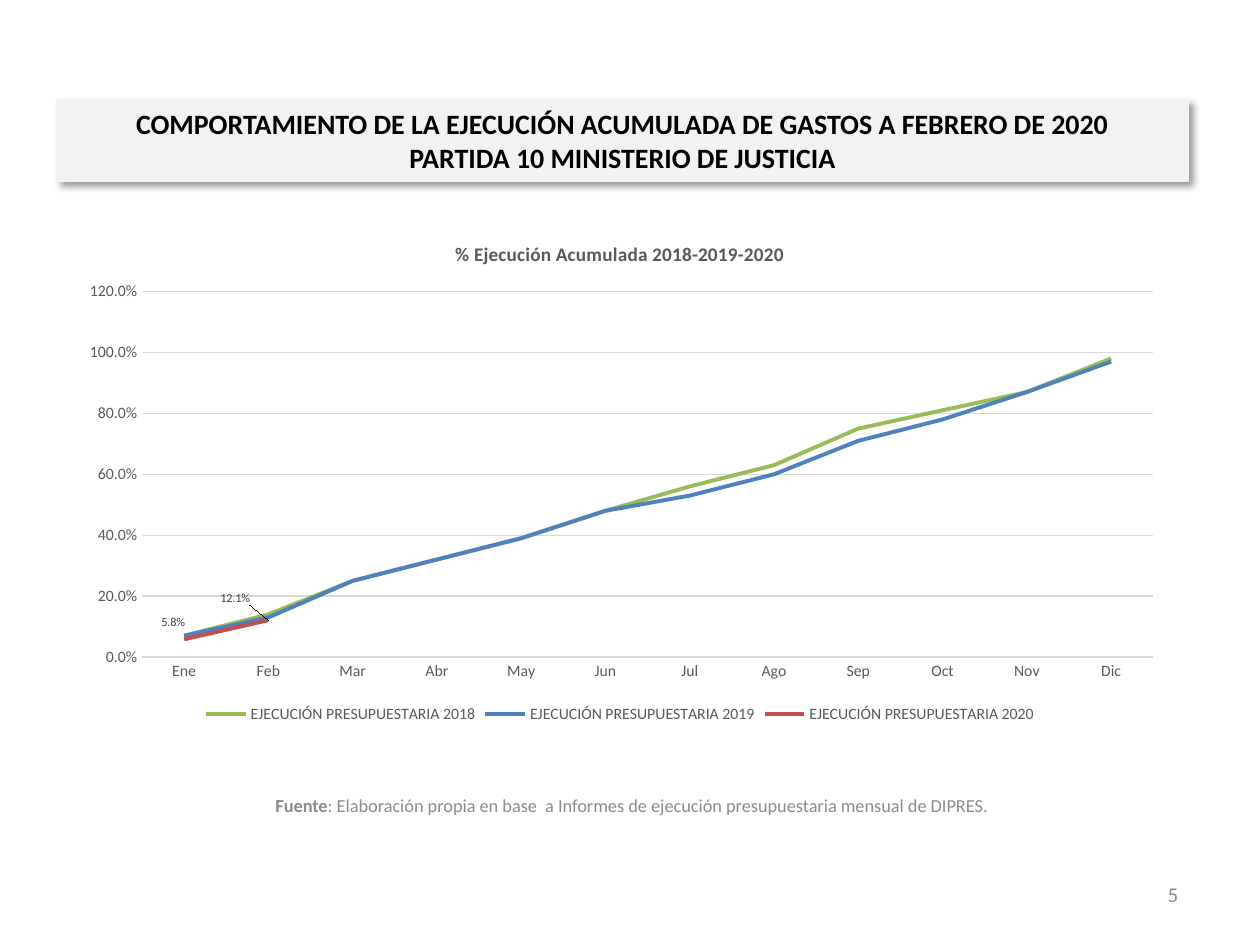
from lxml.etree import SubElement
from pptx import Presentation
from pptx.chart.data import CategoryChartData
from pptx.dml.color import RGBColor
from pptx.enum.chart import XL_LABEL_POSITION, XL_LEGEND_POSITION, XL_TICK_MARK
from pptx.enum.chart import XL_CHART_TYPE
from pptx.enum.text import MSO_ANCHOR, MSO_AUTO_SIZE, PP_ALIGN
from pptx.oxml import parse_xml
from pptx.oxml.ns import nsdecls, qn
from pptx.util import Inches, Pt

FONT = "Calibri"
COLORS = {
    "banner": "F2F2F2", "title": "000000", "muted": "8C8C8C",
    "axis_text": "595959", "grid": "D9D9D9", "label": "404040",
    "2018": "9BBB59", "2019": "4F81BD", "2020": "C0504D",
}
MONTHS = ["Ene", "Feb", "Mar", "Abr", "May", "Jun",
          "Jul", "Ago", "Sep", "Oct", "Nov", "Dic"]
EXECUTION = {
    "2018": [0.07, 0.14, 0.25, 0.32, 0.39, 0.48, 0.56, 0.63, 0.75, 0.81, 0.87, 0.98],
    "2019": [0.07, 0.13, 0.25, 0.32, 0.39, 0.48, 0.53, 0.6, 0.71, 0.78, 0.87, 0.97],
    "2020": [0.058, 0.121] + [None] * 10,
}
# Shift of each 2020 label, as a share of the chart's width and height
LABEL_SHIFTS = [(-0.01, -0.01), (-0.03, -0.02)]


def rgb(name):
    return RGBColor.from_string(COLORS[name])


def style_font(font, size, color, bold=False):
    font.name = FONT
    font.size = Pt(size)
    font.bold = bold
    font.color.rgb = rgb(color)


def write_text(frame, *parts, size, color, bold=False, align=PP_ALIGN.CENTER):
    """Write one paragraph; a part is a string or a (string, bold) pair."""
    frame.word_wrap = True
    frame.auto_size = MSO_AUTO_SIZE.NONE
    frame.vertical_anchor = MSO_ANCHOR.MIDDLE
    paragraph = frame.paragraphs[0]
    paragraph.alignment = align
    for part in parts:
        words, weight = part if isinstance(part, tuple) else (part, bold)
        for number, line in enumerate(words.split("\n")):
            if number:
                paragraph.add_line_break()
            run = paragraph.add_run()
            run.text = line
            style_font(run.font, size, color, weight)


def add_banner(slide, left, top, width, height):
    banner = slide.shapes.title
    banner.left, banner.top, banner.width, banner.height = left, top, width, height
    banner.fill.solid()
    banner.fill.fore_color.rgb = rgb("banner")
    banner.line.color.rgb = rgb("banner")
    banner.line.width = Pt(0.75)
    write_text(banner.text_frame,
               "COMPORTAMIENTO DE LA EJECUCIÓN ACUMULADA DE GASTOS A FEBRERO DE 2020\n"
               "PARTIDA 10 MINISTERIO DE JUSTICIA",
               size=16, color="title", bold=True)
    effects = SubElement(banner.element.spPr, qn("a:effectLst"))
    effects.append(parse_xml(
        f'<a:outerShdw {nsdecls("a")} blurRad="{Pt(4)}" dist="{Pt(3)}" '
        f'dir="{45 * 60000}" algn="tl" rotWithShape="0">'
        '<a:srgbClr val="000000"><a:alpha val="40000"/></a:srgbClr></a:outerShdw>'))


def manual_layout(**values):
    entries = "".join(f'<c:{tag} val="{value}"/>' for tag, value in values.items())
    return parse_xml(f'<c:layout {nsdecls("c")}><c:manualLayout>{entries}'
                     '</c:manualLayout></c:layout>')


def format_axes(chart):
    months, shares = chart.category_axis, chart.value_axis
    for axis in (months, shares):
        axis.major_tick_mark = axis.minor_tick_mark = XL_TICK_MARK.NONE
        style_font(axis.tick_labels.font, 9, "axis_text")
    shares.has_major_gridlines = True
    for line in (months.format.line, shares.major_gridlines.format.line):
        line.color.rgb = rgb("grid")
        line.width = Pt(0.75)
    shares.format.line.fill.background()
    shares.minimum_scale, shares.maximum_scale, shares.major_unit = 0, 1.2, 0.2
    shares.tick_labels.number_format = "0.0%"
    shares.tick_labels.number_format_is_linked = False


def label_points(series):
    for index, (dx, dy) in enumerate(LABEL_SHIFTS):
        label = series.points[index].data_label
        style_font(label.font, 7, "label")
        label.position = XL_LABEL_POSITION.ABOVE
    labels = series.data_labels
    labels.number_format = "0.0%"
    labels.number_format_is_linked = False
    labels.show_value = True
    style_font(labels.font, 7, "label")
    point_labels = series.data_labels._element.findall(qn("c:dLbl"))
    for point_label, (dx, dy) in zip(point_labels, LABEL_SHIFTS):
        point_label.find(qn("c:idx")).addnext(manual_layout(x=dx, y=dy))


def add_execution_chart(slide, left, top, width, height):
    data = CategoryChartData(number_format="0.0%")
    data.categories = MONTHS
    for year, shares in EXECUTION.items():
        data.add_series(f"EJECUCIÓN PRESUPUESTARIA {year}", shares)
    chart = slide.shapes.add_chart(
        XL_CHART_TYPE.LINE, left, top, width, height, data).chart
    style_font(chart.font, 10, "title")

    # Title and legend
    chart.has_title = True
    title = chart.chart_title
    title.include_in_layout = False
    heading = title.text_frame.paragraphs[0].add_run()
    heading.text = "% Ejecución Acumulada 2018-2019-2020"
    style_font(heading.font, 11, "axis_text", bold=True)
    chart.has_legend = True
    chart.legend.position = XL_LEGEND_POSITION.BOTTOM
    chart.legend.include_in_layout = False
    style_font(chart.legend.font, 9, "axis_text")

    # Axes, plot area and lines
    format_axes(chart)
    plot_area = chart._chartSpace.chart.plotArea
    for old_layout in plot_area.findall(qn("c:layout")):
        plot_area.remove(old_layout)
    plot_area.insert(0, manual_layout(layoutTarget="inner", xMode="edge", yMode="edge",
                                      x=0.07, y=0.14, w=0.91, h=0.72))
    for year, series in zip(EXECUTION, chart.plots[0].series):
        series.smooth = False
        series.format.line.color.rgb = rgb(year)
        series.format.line.width = Pt(2.25)
    label_points(chart.plots[0].series[-1])


def add_source(slide, left, top, width, height):
    source = slide.shapes.add_textbox(left, top, width, height)
    write_text(source.text_frame, ("Fuente", True),
               ": Elaboración propia en base  a Informes de ejecución "
               "presupuestaria mensual de DIPRES.",
               size=10.5, color="muted")


def add_page_number(slide, left, top, width, height):
    page_number = slide.shapes.add_textbox(left, top, width, height)
    write_text(page_number.text_frame, "5", size=12, color="muted",
               align=PP_ALIGN.RIGHT)


def main():
    deck = Presentation()
    deck.slide_width, deck.slide_height = Inches(10), Inches(7.5)
    slide = deck.slides.add_slide(deck.slide_layouts.get_by_name("Title Only"))
    add_page_number(slide, Inches(7.12), Inches(6.9), Inches(2.33), Inches(0.4))
    add_banner(slide, Inches(0.45), Inches(0.79), Inches(8.98), Inches(0.65))
    add_source(slide, Inches(0.42), Inches(6.19), Inches(9.19), Inches(0.4))
    add_execution_chart(slide, Inches(0.51), Inches(1.75), Inches(8.82), Inches(4.03))
    deck.save("out.pptx")


if __name__ == "__main__":
    main()
